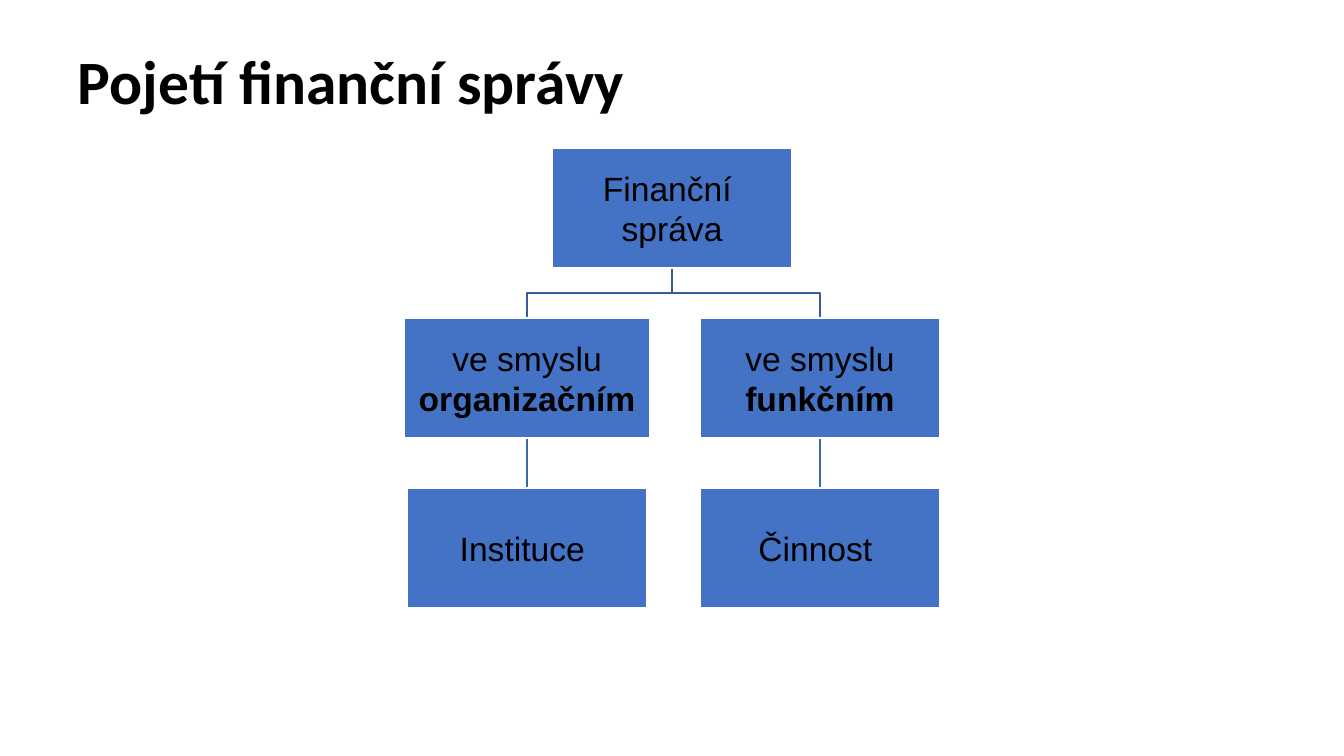
from lxml.etree import SubElement
from pptx import Presentation
from pptx.dml.color import RGBColor
from pptx.enum.shapes import MSO_CONNECTOR as Connector, MSO_SHAPE as Shape
from pptx.enum.text import MSO_ANCHOR as Anchor, PP_ALIGN as Align
from pptx.oxml.ns import qn
from pptx.util import Pt

EMU_PER_PX = 914400 / 100.8
BLACK = RGBColor(0x00, 0x00, 0x00)
WHITE = RGBColor(0xFF, 0xFF, 0xFF)
BLUE = RGBColor(0x44, 0x72, 0xC4)
BRANCH_BLUE = RGBColor(0x36, 0x5B, 0x9D)
STEM_BLUE = RGBColor(0x3E, 0x67, 0xB2)

BOX_WIDTH, BOX_HEIGHT = 240, 120
ROOT_TOP, LEVEL_STEP = 148, 170
ROOT_CENTER = 672
BRANCHES = [
    (527, 246, "organizačním", "Instituce "),
    (820, BOX_WIDTH, "funkčním", "Činnost "),
]


def px(length):
    """Turn a length in pixels into EMU."""
    return round(length * EMU_PER_PX)


def set_font(paragraph, name, size, bold=False):
    """Give a paragraph its black font."""
    font = paragraph.font
    font.name, font.size, font.bold = name, Pt(size), bold
    font.color.rgb = BLACK


def add_title(slide, text):
    """Add the slide heading."""
    title = slide.shapes.add_textbox(px(68), px(13), px(1109), px(143))
    frame = title.text_frame
    frame.word_wrap = True
    frame.vertical_anchor = Anchor.MIDDLE
    heading = frame.paragraphs[0]
    heading.text = text
    heading.line_spacing = 0.9
    set_font(heading, "Calibri", 44, bold=True)


def level_top(level):
    """Return the top of the boxes on a level of the chart."""
    return ROOT_TOP + level * LEVEL_STEP


def add_box(slide, center, level, lines, width=BOX_WIDTH):
    """Add a box with lines given as pairs of text and boldness."""
    box = slide.shapes.add_shape(
        Shape.RECTANGLE, px(center - width / 2), px(level_top(level)),
        px(width), px(BOX_HEIGHT))
    box.shadow.inherit = False
    box.fill.solid()
    box.fill.fore_color.rgb = BLUE
    box.line.color.rgb = WHITE
    box.line.width = Pt(1)
    frame = box.text_frame
    frame.word_wrap = True
    frame.vertical_anchor = Anchor.MIDDLE
    frame.margin_left = frame.margin_right = px(2)
    frame.margin_top = frame.margin_bottom = px(2)
    for index, (text, bold) in enumerate(lines):
        line = frame.add_paragraph() if index else frame.paragraphs[0]
        line.text = text
        line.alignment = Align.CENTER
        set_font(line, "Arial", 24, bold)


def add_branch(slide, center):
    """Add the bent line from the root box to a box below it."""
    start, end = level_top(0) + BOX_HEIGHT, level_top(1)
    bend = (start + end) / 2
    builder = slide.shapes.build_freeform(ROOT_CENTER, start, scale=EMU_PER_PX)
    builder.add_line_segments(
        [(ROOT_CENTER, bend), (center, bend), (center, end)], close=False)
    branch = builder.convert_to_shape()
    branch.shadow.inherit = False
    branch.fill.background()
    branch.line.color.rgb = BRANCH_BLUE
    branch.line.width = Pt(1)


def add_stem(slide, center):
    """Add the straight line between the two lower levels."""
    stem = slide.shapes.add_connector(
        Connector.STRAIGHT, px(center), px(level_top(1) + BOX_HEIGHT),
        px(center), px(level_top(2)))
    stem.line.color.rgb = STEM_BLUE
    stem.line.width = Pt(1)
    SubElement(stem._element.spPr, qn("a:effectLst"))


def main():
    """Build the slide and save it."""
    deck = Presentation()
    deck.slide_width, deck.slide_height = px(1344), px(756)
    slide = deck.slides.add_slide(deck.slide_layouts[6])
    add_title(slide, "Pojetí finanční správy")
    for center, *_ in BRANCHES:
        add_stem(slide, center)
        add_branch(slide, center)
    add_box(slide, ROOT_CENTER, 0, [("Finanční ", False), ("správa", False)])
    for center, width, sense, meaning in BRANCHES:
        add_box(slide, center, 1, [("ve smyslu", False), (sense, True)], width)
        add_box(slide, center, 2, [(meaning, False)])
    deck.save("out.pptx")


if __name__ == "__main__":
    main()
